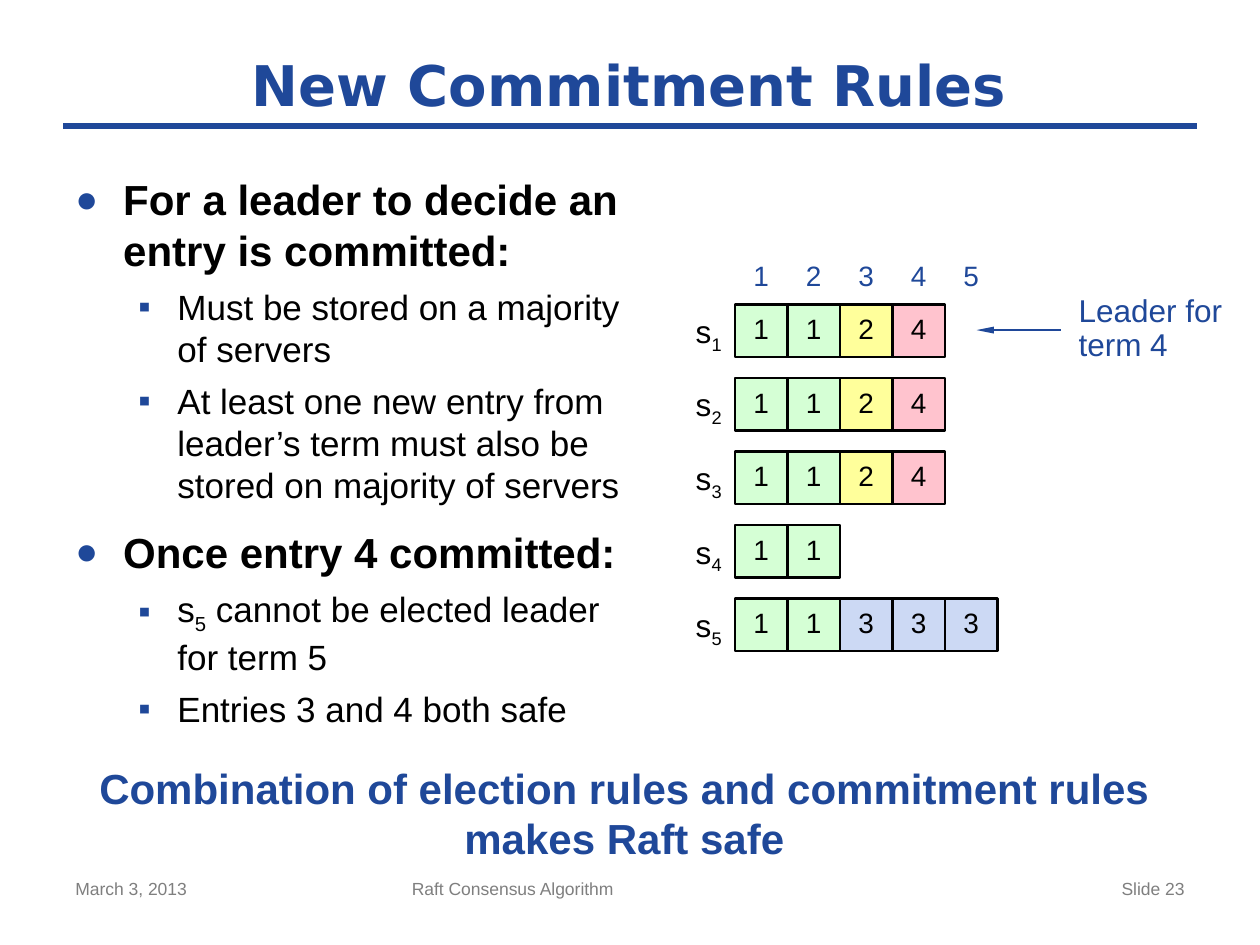
from lxml import etree
from pptx import Presentation
from pptx import util as u
from pptx.dml.color import RGBColor
from pptx.enum import shapes, text
from pptx.oxml import ns

Inches, Pt = u.Inches, u.Pt
ALIGN = text.PP_ALIGN
COLORS = {"blue": "1F4899", "black": "000000", "gray": "7F7F7F"}
TERM_FILLS = {1: "D5FFD5", 2: "FFFF9B", 3: "CCD9F4", 4: "FFC3CE"}

deck = Presentation()
deck.slide_width, deck.slide_height = Inches(10), Inches(7.5)
slide = deck.slides.add_slide(deck.slide_layouts[6])


def write(paragraph, parts, size, color, bold=False, align=ALIGN.LEFT, name="Arial"):
    """Fill a paragraph; every second part is a subscript."""
    paragraph.text = parts[0]
    for i, part in enumerate(parts[1:], 1):
        run = paragraph.add_run()
        run.text = part
        if i % 2:
            run.font._element.set("baseline", "-25000")
    paragraph.alignment = align
    font = paragraph.font
    font.name, font.size, font.bold = name, Pt(size), bold
    font.color.rgb = RGBColor.from_string(COLORS[color])


def add_box(left, top, width, height, margins=True, wrap=True):
    frame = slide.shapes.add_textbox(
        Inches(left), Inches(top), Inches(width), Inches(height)).text_frame
    frame.word_wrap = wrap
    if not margins:
        frame.margin_left = frame.margin_right = 0
        frame.margin_top = frame.margin_bottom = 0
    return frame


# Title, rule and leader arrow
title = add_box(0.33, 0.33, 9.33, 0.67)
title.vertical_anchor = text.MSO_ANCHOR.MIDDLE
write(title.paragraphs[0], ["New Commitment Rules"], 32, "blue", True,
      ALIGN.CENTER, "DejaVu Sans")

for x1, x2, y, weight, arrow in [(0.5, 9.5, 1, 4, False), (8.42, 7.75, 2.62, 1.5, True)]:
    rule = slide.shapes.add_connector(
        shapes.MSO_CONNECTOR.STRAIGHT, Inches(x1), Inches(y), Inches(x2), Inches(y))
    rule.line.color.rgb = RGBColor.from_string(COLORS["blue"])
    rule.line.width = Pt(weight)
    if arrow:
        etree.SubElement(rule.line._get_or_add_ln(), ns.qn("a:tailEnd"),
                         type="triangle", w="sm", len="lg")
    etree.SubElement(rule._element.spPr, ns.qn("a:effectLst"))

# Commitment rules: (level, text parts)
rules = [
    (0, ["For a leader to decide an entry is committed:"]),
    (1, ["Must be stored on a majority of servers"]),
    (1, ["At least one new entry from leader’s term must also be stored "
         "on majority of servers"]),
    (0, ["Once entry 4 committed:"]),
    (1, ["s", "5", " cannot be elected leader for term 5"]),
    (1, ["Entries 3 and 4 both safe"]),
]
# Per level: left, hanging, space before, size, bullet, bullet percent
levels = [(0.38, 0.38, 12, 24, "●", 90), (0.81, 0.31, 6, 20, "▪", 100)]
body = add_box(0.5, 1.33, 4.67, 4.67)
for i, (level, parts) in enumerate(rules):
    left, hanging, before, size, bullet, percent = levels[level]
    paragraph = body.add_paragraph() if i else body.paragraphs[0]
    paragraph.level = level
    props = paragraph._p.get_or_add_pPr()
    props.set("marL", str(Inches(left)))
    props.set("indent", str(-Inches(hanging)))
    bullet_color = etree.SubElement(props, ns.qn("a:buClr"))
    etree.SubElement(bullet_color, ns.qn("a:srgbClr"), val=COLORS["blue"])
    etree.SubElement(props, ns.qn("a:buSzPct"), val=str(percent * 1000))
    etree.SubElement(props, ns.qn("a:buFont"), typeface="Arial")
    etree.SubElement(props, ns.qn("a:buChar"), char=bullet)
    paragraph.space_before = Pt(before)
    write(paragraph, parts, size, "black", level == 0)

# Server logs: entry terms by index
logs = [[1, 1, 2, 4], [1, 1, 2, 4], [1, 1, 2, 4], [1, 1], [1, 1, 3, 3, 3]]
cell = 5 / 12
log_left, log_top, row_step = 5 + 2 * cell, 2 + cell, 7 / 12

for index in range(5):
    heading = add_box(log_left + index * cell, 2, cell, 0.37)
    write(heading.paragraphs[0], [str(index + 1)], 16, "blue", align=ALIGN.CENTER)

for row, terms in enumerate(logs):
    top = log_top + row * row_step
    server = add_box(log_left - cell, top + 0.06, cell, 0.3, margins=False)
    write(server.paragraphs[0], ["s", str(row + 1)], 18, "black", align=ALIGN.CENTER)
    for index, term in enumerate(terms):
        entry = slide.shapes.add_shape(
            shapes.MSO_SHAPE.RECTANGLE, Inches(log_left + index * cell), Inches(top),
            Inches(cell), Inches(cell))
        entry.shadow.inherit = False
        entry.fill.solid()
        entry.fill.fore_color.rgb = RGBColor.from_string(TERM_FILLS[term])
        entry.line.color.rgb = RGBColor.from_string(COLORS["black"])
        entry.line.width = Pt(1.5)
        frame = entry.text_frame
        frame.margin_left = frame.margin_right = 0
        frame.margin_top = frame.margin_bottom = 0
        frame.vertical_anchor = text.MSO_ANCHOR.MIDDLE
        write(frame.paragraphs[0], [str(term)], 16, "black", align=ALIGN.CENTER)
        frame.paragraphs[0].line_spacing = Pt(17)

# Leader note
leader = add_box(8.56, 2.35, 1.42, 0.53, margins=False).paragraphs[0]
write(leader, ["Leader for\vterm 4"], 18, "blue")
leader.line_spacing = Pt(19)

# Conclusion
conclusion = add_box(0.65, 6, 8.61, 0.91, wrap=False)
write(conclusion.paragraphs[0],
      ["Combination of election rules and commitment rules\vmakes Raft safe"],
      24, "blue", True, ALIGN.CENTER)

# Footer
for left, width, label, align in [
    (0.5, 2.33, "March 3, 2013", ALIGN.LEFT),
    (3.17, 3.75, "Raft Consensus Algorithm", ALIGN.LEFT),
    (7.17, 2.33, "Slide 23", ALIGN.RIGHT),
]:
    footer = add_box(left, 6.92, width, 0.43)
    write(footer.paragraphs[0], [label], 10, "gray", align=align)

deck.save("out.pptx")
